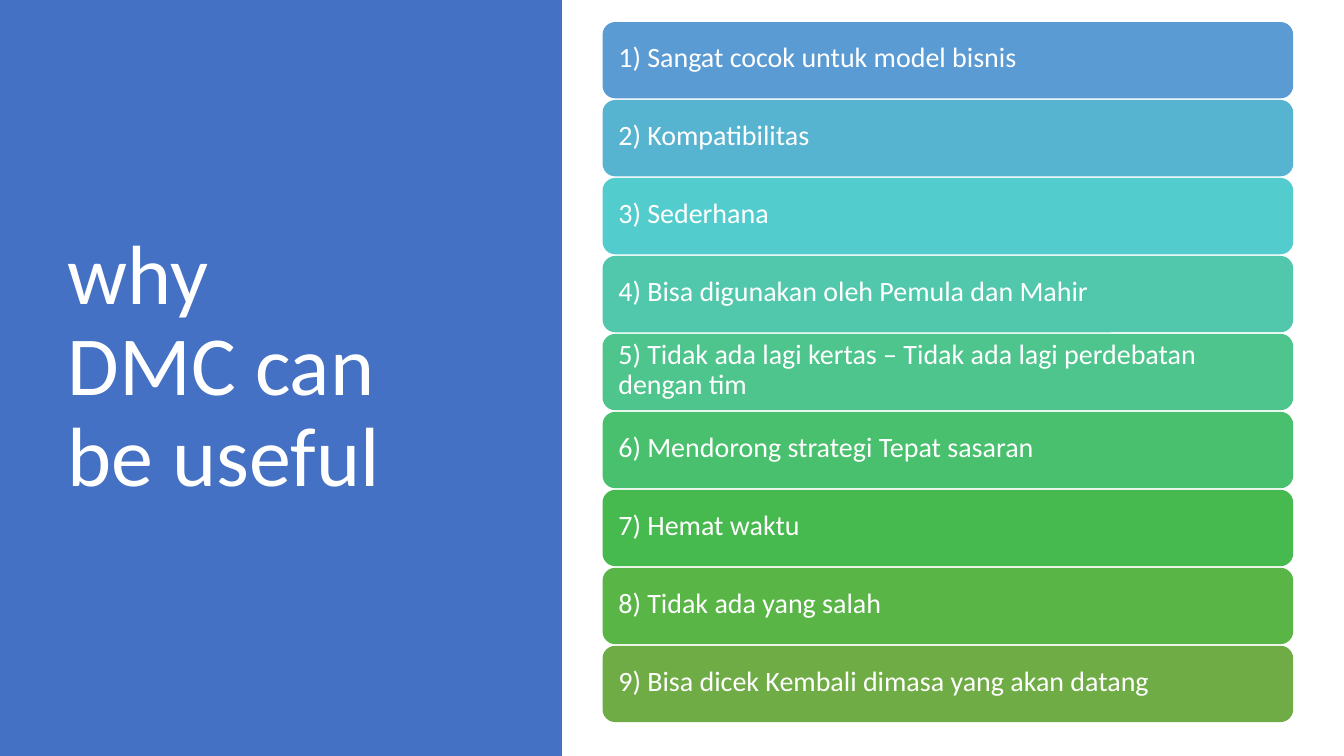
"""Build the slide on why DMC can be useful: a title panel and nine benefit bars."""
from dataclasses import dataclass

from pptx import Presentation
from pptx.dml.color import RGBColor
from pptx.enum.shapes import MSO_SHAPE
from pptx.enum.text import MSO_ANCHOR, PP_ALIGN
from pptx.util import Pt

RECT = MSO_SHAPE.RECTANGLE
ROUNDED = MSO_SHAPE.ROUNDED_RECTANGLE
TOP, MIDDLE = MSO_ANCHOR.TOP, MSO_ANCHOR.MIDDLE
LEFT = PP_ALIGN.LEFT


@dataclass(frozen=True)
class Theme:
    font: str = "Calibri"
    title_size: int = 90
    bar_size: int = 30
    text: str = "FFFFFF"
    panel: str = "4471C4"
    bars: tuple = ("5B9BD4", "56B4D1", "53CCCD", "51C8AC", "4DC58D",
                   "49C06D", "47BA4F", "58B546", "6FAC46")


THEME = Theme()
SLIDE_W, SLIDE_H = 1440, 810
PANEL_W = 602
BAR_X, BAR_Y, BAR_W, BAR_H = 645.6, 23.6, 740, 81.8
BAR_PITCH = 83.54
TITLE = "why\vDMC can\vbe useful"
BENEFITS = (
    "Sangat cocok untuk model bisnis",
    "Kompatibilitas",
    "Sederhana",
    "Bisa digunakan oleh Pemula dan Mahir",
    "Tidak ada lagi kertas – Tidak ada lagi perdebatan dengan tim",
    "Mendorong strategi Tepat sasaran",
    "Hemat waktu",
    "Tidak ada yang salah",
    "Bisa dicek Kembali dimasa yang akan datang",
)


def write_text(sp, text, *, size, anchor=TOP, margins=(0, 0, 0, 0)):
    tf = sp.text_frame
    tf.word_wrap = True
    tf.vertical_anchor = anchor
    tf.margin_left, tf.margin_top, tf.margin_right, tf.margin_bottom = map(Pt, margins)
    p = tf.paragraphs[0]
    p.text = text
    p.alignment = LEFT
    p.line_spacing = 0.9
    for r in p.runs:
        r.font.name = THEME.font
        r.font.size = Pt(size)
        r.font.color.rgb = RGBColor.from_string(THEME.text)


def add_block(s, kind, x, y, w, h, color):
    sp = s.shapes.add_shape(kind, Pt(x), Pt(y), Pt(w), Pt(h))
    sp.shadow.inherit = False
    sp.fill.solid()
    sp.fill.fore_color.rgb = RGBColor.from_string(color)
    sp.line.fill.background()
    return sp


def add_title(s):
    add_block(s, RECT, 0, 0, PANEL_W, SLIDE_H, THEME.panel)
    sp = s.shapes.add_textbox(Pt(72.7), Pt(249), Pt(350), Pt(297))
    write_text(sp, TITLE, size=THEME.title_size)


def add_benefits(s):
    for i, (benefit, color) in enumerate(zip(BENEFITS, THEME.bars)):
        sp = add_block(s, ROUNDED, BAR_X, BAR_Y + i * BAR_PITCH, BAR_W, BAR_H, color)
        write_text(sp, f"{i + 1}) {benefit}", size=THEME.bar_size,
                   anchor=MIDDLE, margins=(13, 0, 90, 3))


def main():
    prs = Presentation()
    prs.slide_width, prs.slide_height = Pt(SLIDE_W), Pt(SLIDE_H)
    s = prs.slides.add_slide(prs.slide_layouts[6])
    add_title(s)
    add_benefits(s)
    prs.save("out.pptx")


if __name__ == "__main__":
    main()
